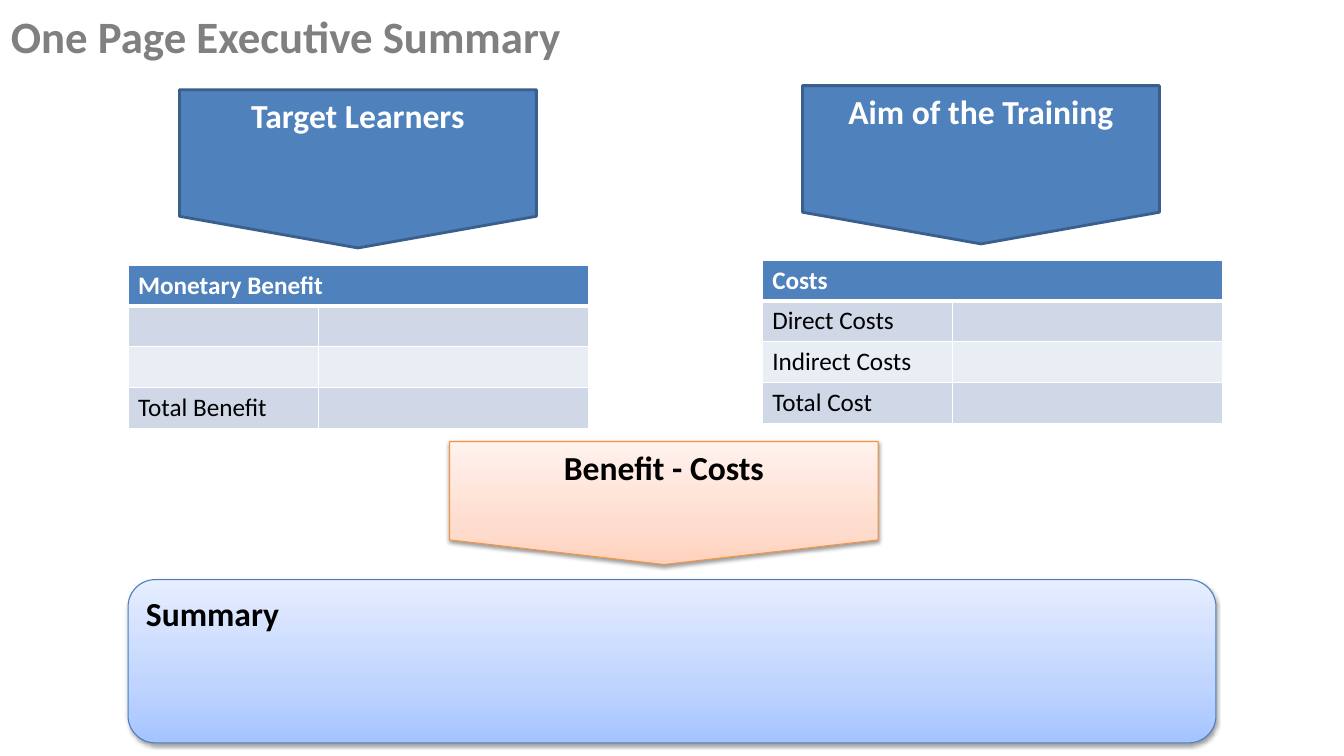
from pptx import Presentation
from pptx.dml.color import RGBColor
from pptx.enum import shapes, text
from pptx.oxml import parse_xml
from pptx.oxml import ns
from pptx.util import Inches, Pt

WHITE = RGBColor(0xFF, 0xFF, 0xFF)
BLACK = RGBColor(0, 0, 0)
GRAY = RGBColor(0x80, 0x80, 0x80)
BLUE = RGBColor(0x4F, 0x81, 0xBD)
NAVY = RGBColor(0x3A, 0x5F, 0x8C)
EDGE = RGBColor(0x4B, 0x7E, 0xBC)
ORANGE = RGBColor(0xF6, 0x92, 0x40)
BAND = RGBColor(0xD0, 0xD8, 0xE8)
PALE = RGBColor(0xE9, 0xED, 0xF4)
SKY = (RGBColor(0xA4, 0xC4, 0xFF), RGBColor(0xBF, 0xD4, 0xFF), RGBColor(0xE6, 0xEE, 0xFF))
PEACH = (RGBColor(0xFF, 0xD2, 0xBD), RGBColor(0xFF, 0xDE, 0xD0), RGBColor(0xFF, 0xF2, 0xED))

ARROW = shapes.MSO_SHAPE.FLOWCHART_OFFPAGE_CONNECTOR
PANEL = shapes.MSO_SHAPE.FLOWCHART_ALTERNATE_PROCESS
LEFT = text.PP_ALIGN.LEFT
CENTER = text.PP_ALIGN.CENTER
XMLNS = ns.nsdecls("a")


def write(frame, words, size, color, bold=True, align=LEFT):
    para = frame.paragraphs[0]
    para.alignment = align
    run = para.add_run()
    run.text = words
    font = run.font
    font.name = "Calibri"
    font.size = Pt(size)
    font.bold = bold
    font.color.rgb = color


def add_title(slide, words):
    box = slide.shapes.add_textbox(Inches(0.01), Inches(0.04), Inches(5.71), Inches(0.64))
    box.text_frame.word_wrap = False
    write(box.text_frame, words, 32, GRAY)


def add_box(slide, kind, place, words, line, width, color, align=CENTER):
    box = slide.shapes.add_shape(kind, *map(Inches, place))
    box.shadow.inherit = False
    box.fill.solid()
    box.fill.fore_color.rgb = BLUE
    box.line.color.rgb = line
    box.line.width = Pt(width)
    box.text_frame.word_wrap = True
    box.text_frame.vertical_anchor = text.MSO_ANCHOR.TOP
    write(box.text_frame, words, 24, color, align=align)
    return box


def shade(box, colors):
    box.fill.gradient()
    box.fill.gradient_angle = 90
    props = box._element.spPr
    stops = props.find(".//" + ns.qn("a:gsLst"))
    for stop in list(stops):
        stops.remove(stop)
    for pos, color in zip((0, 35, 100), colors):
        stops.append(parse_xml(
            f'<a:gs {XMLNS} pos="{pos * 1000}"><a:srgbClr val="{color}"/></a:gs>'))
    props.find(ns.qn("a:effectLst")).append(parse_xml(
        f'<a:outerShdw {XMLNS} blurRad="{Pt(3.1)}" dist="{Pt(1.6)}" dir="5400000" '
        'rotWithShape="0"><a:srgbClr val="000000"><a:alpha val="38000"/>'
        '</a:srgbClr></a:outerShdw>'))


def rule(cell, top, bottom):
    props = cell._tc.get_or_add_tcPr()
    for spot, (side, width) in enumerate(zip("LRTB", (1, 1, top, bottom))):
        props.insert(spot, parse_xml(
            f'<a:ln{side} {XMLNS} w="{Pt(width)}"><a:solidFill>'
            f'<a:srgbClr val="{WHITE}"/></a:solidFill></a:ln{side}>'))


def add_grid(slide, left, top, labels):
    grid = slide.shapes.add_table(
        4, 2, Inches(left), Inches(top), Inches(4.57), Inches(1.62)).table
    for col, width in zip(grid.columns, (1.89, 2.68)):
        col.width = Inches(width)
    for i, label in enumerate(labels):
        grid.rows[i].height = Inches(1.62 / 4)
        head = i == 0
        for cell in grid.rows[i].cells:
            cell.fill.solid()
            cell.fill.fore_color.rgb = BLUE if head else (PALE, BAND)[i % 2]
            rule(cell, 3 if i == 1 else 1, 3 if head else 1)
        if label:
            write(grid.cell(i, 0).text_frame, label, 18, WHITE if head else BLACK, head)
    grid.cell(0, 0).merge(grid.cell(0, 1))


def main():
    deck = Presentation()
    deck.slide_width = Inches(13.33)
    deck.slide_height = Inches(7.5)
    slide = deck.slides.add_slide(deck.slide_layouts[6])

    add_title(slide, "One Page Executive Summary")
    add_box(slide, ARROW, (7.96, 0.85, 3.54, 1.57), "Aim of the Training", NAVY, 2, WHITE)
    add_box(slide, ARROW, (1.78, 0.89, 3.54, 1.57), "Target Learners", NAVY, 2, WHITE)
    add_grid(slide, 7.56, 2.58, ("Costs", "Direct Costs", "Indirect Costs", "Total Cost"))
    add_grid(slide, 1.27, 2.63, ("Monetary Benefit", "", "", "Total Benefit"))
    panel = add_box(slide, PANEL, (1.27, 5.75, 10.79, 1.62), "Summary",
                    EDGE, 0.75, BLACK, LEFT)
    shade(panel, SKY)
    net = add_box(slide, ARROW, (4.46, 4.38, 4.25, 1.22), "Benefit - Costs",
                  ORANGE, 0.75, BLACK)
    shade(net, PEACH)
    deck.save("out.pptx")


if __name__ == "__main__":
    main()
